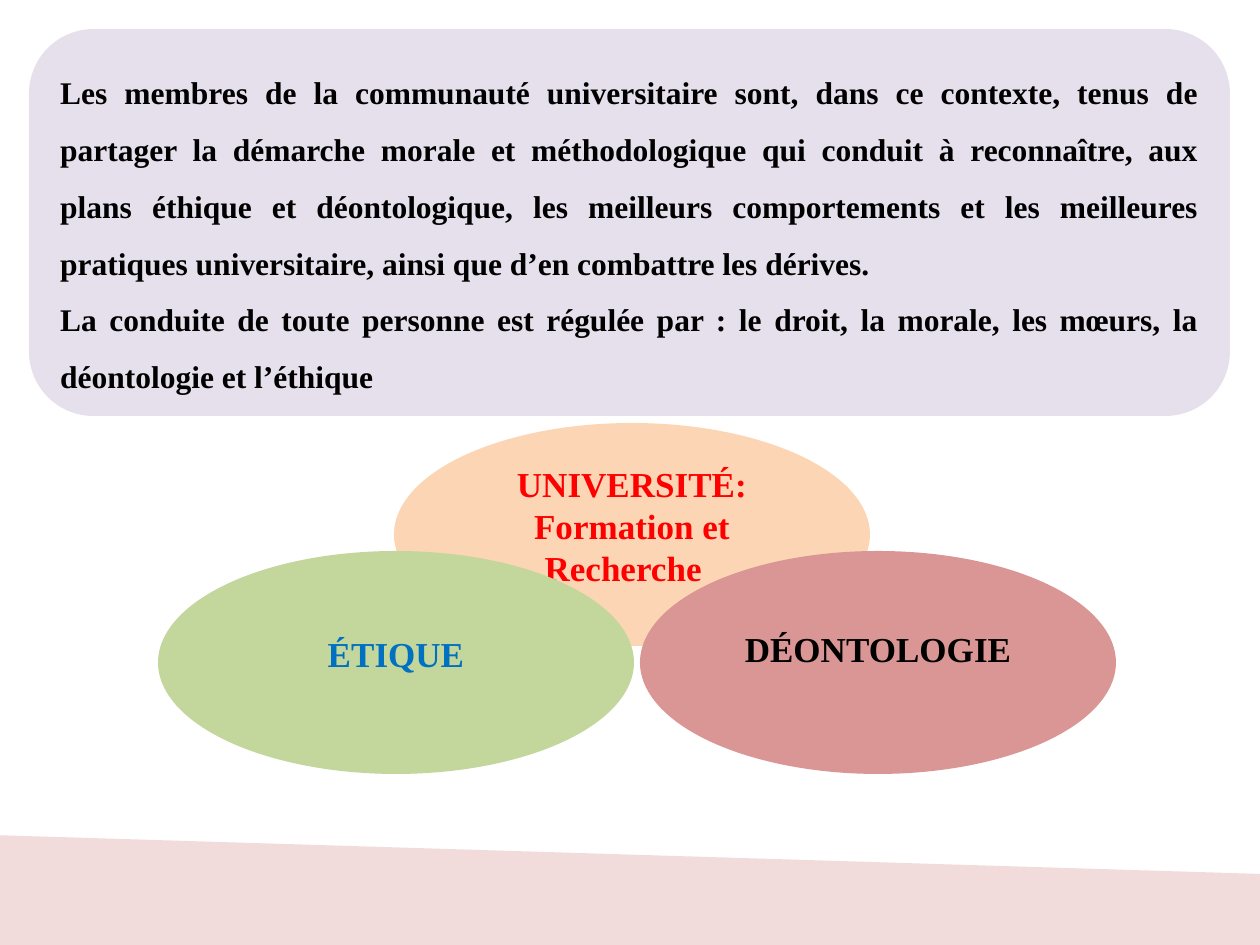
import pptx
import pptx.util
import pptx.dml.color
import pptx.enum.shapes
import pptx.enum.text

EMU_PER_PX = 914400 // 126
SLIDE_SIZE = (1260, 945)
FONT = "Times New Roman"
SHAPES = pptx.enum.shapes.MSO_SHAPE
ALIGN = pptx.enum.text.PP_ALIGN

FOOTER = {"color": "F2DCDB", "points": [(0, 837), (1270, 876), (1262, 936), (1260, 945), (0, 945)]}
INTRODUCTION = {
    "box": (29, 29, 1201, 387),
    "color": "E6E0EC",
    "lines": [
        "Les membres de la communauté universitaire sont, dans ce contexte, tenus de partager la démarche "
        "morale et méthodologique qui conduit à reconnaître, aux plans éthique et déontologique, les "
        "meilleurs comportements et les meilleures pratiques universitaire, ainsi que d’en combattre les dérives.",
        "La conduite de toute personne est régulée par : le droit, la morale, les mœurs, la\v"
        "déontologie et l’éthique",
    ],
}
ELLIPSE_SIZE = (476, 223)
ELLIPSES = [
    ((394, 423), "FCD5B5", ["UNIVERSITÉ:", "Formation et Recherche  "], {"color": "FF0000", "bottom": 24}),
    ((158, 551), "C3D69B", ["ÉTIQUE"], {"color": "0070C0", "bottom": 24}),
    ((640, 551), "D99694", ["DÉONTOLOGIE"], {"color": "000000", "bottom": 34}),
]


def px(value):
    return pptx.util.Emu(value * EMU_PER_PX)


def rgb(color):
    return pptx.dml.color.RGBColor.from_string(color)


def paint(shape, color, line_width=None):
    shape.shadow.inherit = False
    shape.fill.solid()
    shape.fill.fore_color.rgb = rgb(color)
    if line_width is None:
        shape.line.fill.background()
    else:
        shape.line.color.rgb = rgb(color)
        shape.line.width = pptx.util.Pt(line_width)


def write_text(shape, lines, size=20, color="000000", align=ALIGN.CENTER, spacing=1.0, bottom=6):
    frame = shape.text_frame
    frame.word_wrap = True
    frame.vertical_anchor = pptx.enum.text.MSO_ANCHOR.MIDDLE
    frame.margin_bottom = px(bottom)
    for index, line in enumerate(lines):
        paragraph = frame.add_paragraph() if index else frame.paragraphs[0]
        paragraph.text = line
        paragraph.alignment = align
        paragraph.line_spacing = spacing
        for run in paragraph.runs:
            run.font.name = FONT
            run.font.size = pptx.util.Pt(size)
            run.font.bold = True
            run.font.color.rgb = rgb(color)


def add_shape(slide, kind, box, color):
    shape = slide.shapes.add_shape(kind, *map(px, box))
    paint(shape, color)
    return shape


def main():
    presentation = pptx.Presentation()
    presentation.slide_width, presentation.slide_height = map(px, SLIDE_SIZE)
    slide = presentation.slides.add_slide(presentation.slide_layouts[6])

    start, *others = FOOTER["points"]
    builder = slide.shapes.build_freeform(*start, scale=EMU_PER_PX)
    builder.add_line_segments(others, close=True)
    paint(builder.convert_to_shape(), FOOTER["color"], line_width=2)

    introduction = add_shape(slide, SHAPES.ROUNDED_RECTANGLE, INTRODUCTION["box"], INTRODUCTION["color"])
    write_text(introduction, INTRODUCTION["lines"], size=18, align=ALIGN.JUSTIFY, spacing=1.5, bottom=2)

    for position, color, lines, text_format in ELLIPSES:
        ellipse = add_shape(slide, SHAPES.OVAL, position + ELLIPSE_SIZE, color)
        write_text(ellipse, lines, **text_format)

    presentation.save("out.pptx")


if __name__ == "__main__":
    main()
